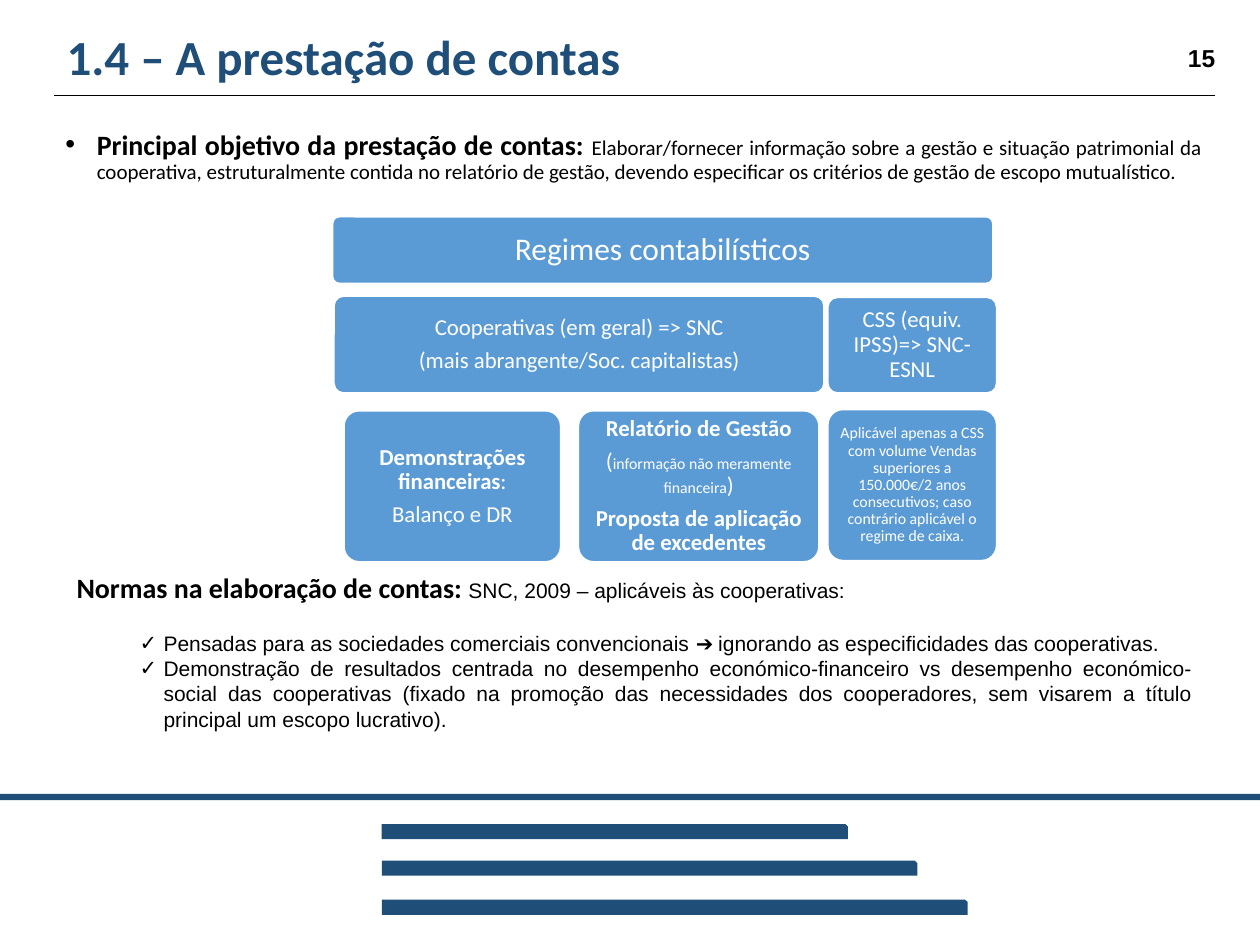
from pptx import Presentation
from pptx.dml.color import RGBColor
from pptx.enum.shapes import MSO_CONNECTOR, MSO_SHAPE
from pptx.enum.text import MSO_ANCHOR, PP_ALIGN
from pptx.oxml.ns import qn
from pptx.util import Emu, Pt
from lxml.etree import SubElement

EMU_PER_PX = 9144  # 100 px to the inch


def px(length):
    return Emu(length * EMU_PER_PX)


def color(value):
    return RGBColor.from_string(value)


def write(frame, text, first=False, size=12, font="Calibri", ink="000000", bold=False,
          align=PP_ALIGN.LEFT, spacing=1.0, before=0, after=0, bullet=None, indent=(0, 0)):
    """Add a paragraph; text is a string or a list of (string, overrides) spans."""
    para = frame.paragraphs[0] if first else frame.add_paragraph()
    para.alignment, para.line_spacing = align, spacing
    para.space_before, para.space_after = Pt(before), Pt(after)
    if bullet:
        props = para._p.get_or_add_pPr()
        props.set("marL", str(px(indent[0])))
        props.set("indent", str(px(indent[1])))
        SubElement(props, qn("a:buFont")).set("typeface", "Arial")
        SubElement(props, qn("a:buChar")).set("char", bullet)
    base = {"size": size, "font": font, "ink": ink, "bold": bold}
    for words, changes in [(text, {})] if isinstance(text, str) else text:
        style = {**base, **changes}
        span = para.add_run()
        span.text = words
        span.font.size, span.font.name = Pt(style["size"]), style["font"]
        span.font.bold = style["bold"]
        span.font.color.rgb = color(style["ink"])


class Page:
    navy, blue, white, black = "1F4E79", "5B9BD5", "FFFFFF", "000000"

    def __init__(self, deck):
        self.slide = deck.slides.add_slide(deck.slide_layouts[6])

    def shape(self, kind, left, top, width, height, fill):
        shape = self.slide.shapes.add_shape(kind, px(left), px(top), px(width), px(height))
        shape.shadow.inherit = False
        shape.fill.solid()
        shape.fill.fore_color.rgb = color(fill)
        shape.line.fill.background()
        return shape

    def rule(self, left, right, y):
        line = self.slide.shapes.add_connector(MSO_CONNECTOR.STRAIGHT, px(left), px(y), px(right), px(y))
        line.line.color.rgb = color(self.black)
        line.line.width = Pt(0.5)
        SubElement(line._element.spPr, qn("a:effectLst"))

    def text(self, left, top, width, height, anchor=MSO_ANCHOR.TOP):
        box = self.slide.shapes.add_textbox(px(left), px(top), px(width), px(height))
        box.text_frame.word_wrap = True
        box.text_frame.vertical_anchor = anchor
        return box.text_frame

    def tile(self, left, top, width, height, lines, size=13, inset=5):
        tile = self.shape(MSO_SHAPE.ROUNDED_RECTANGLE, left, top, width, height, self.blue)
        tile.adjustments[0] = 0.1
        tile.line.color.rgb = color(self.white)
        tile.line.width = Pt(1)
        frame = tile.text_frame
        frame.word_wrap = True
        frame.vertical_anchor = MSO_ANCHOR.MIDDLE
        frame.margin_left = frame.margin_right = px(inset)
        frame.margin_top = frame.margin_bottom = px(inset)
        for index, line in enumerate(lines):
            write(frame, line, first=index == 0, size=size, ink=self.white,
                  align=PP_ALIGN.CENTER, spacing=0.9, after=round(size * 0.35, 2))


def main():
    deck = Presentation()
    deck.slide_width, deck.slide_height = px(1000), px(750)
    page = Page(deck)
    strong = {"bold": True}

    # Footer bars
    page.shape(MSO_SHAPE.RECTANGLE, 0, 630, 1000, 5, page.navy)
    for top, width in ((654, 370), (683, 425), (714, 465)):
        page.shape(MSO_SHAPE.SNIP_1_RECTANGLE, 303, top, width, 12, page.navy)

    # Title, rule and page number
    page.rule(43, 964, 76)
    write(page.text(43, 21, 921, 53, MSO_ANCHOR.MIDDLE), "1.4 – A prestação de contas",
          first=True, size=28, ink=page.navy, bold=True, spacing=0.9)
    write(page.text(933, 29, 47, 34), "15", first=True, size=14, font="Arial", bold=True)

    # Main objective
    write(page.text(42, 99, 922, 60), [
        ("Principal objetivo da prestação de contas: ", {"size": 16, "bold": True}),
        ("Elaborar/fornecer informação sobre a gestão e situação patrimonial da cooperativa, "
         "estruturalmente contida no relatório de gestão, devendo especificar os critérios "
         "de gestão de escopo mutualístico.", {}),
    ], first=True, align=PP_ALIGN.JUSTIFY, spacing=0.9, after=6, bullet="•", indent=(25, -25))

    # Accounting regimes
    page.tile(264, 172, 524, 53, ["Regimes contabilísticos"], size=18, inset=7)
    page.tile(265, 235, 389, 77, ["Cooperativas (em geral) => SNC",
                                  "(mais abrangente/Soc. capitalistas)"])
    page.tile(273, 326, 172, 120, [[("Demonstrações financeiras", strong), (":", {})],
                                   "Balanço e DR"])
    page.tile(459, 326, 191, 120, [
        [("Relatório de Gestão", strong)],
        [("(", {}), ("informação não meramente financeira", {"size": 9}), (")", {})],
        [("Proposta de aplicação de excedentes", strong)],
    ])
    page.tile(657, 236, 134, 76, ["CSS (equiv. IPSS)=> SNC-ESNL"])
    page.tile(657, 325, 134, 120, [
        "Aplicável apenas a CSS com volume Vendas superiores a 150.000€/2 anos "
        "consecutivos; caso contrário aplicável o regime de caixa."], size=9, inset=4)

    # Accounting standards
    standards = page.text(51, 448, 906, 158)
    write(standards, [
        ("Normas na elaboração de contas: ", {"size": 16, "font": "Calibri", "bold": True}),
        ("SNC, 2009 – aplicáveis às cooperativas:", {}),
    ], first=True, font="Arial", align=PP_ALIGN.JUSTIFY, after=15)
    for point in (
        "Pensadas para as sociedades comerciais convencionais ➔ ignorando as "
        "especificidades das cooperativas.",
        "Demonstração de resultados centrada no desempenho económico-financeiro vs "
        "desempenho económico-social das cooperativas (fixado na promoção das necessidades "
        "dos cooperadores, sem visarem a título principal um escopo lucrativo).",
    ):
        write(standards, point, font="Arial", align=PP_ALIGN.JUSTIFY, bullet="✓", indent=(69, -19))

    deck.save("out.pptx")


if __name__ == "__main__":
    main()
